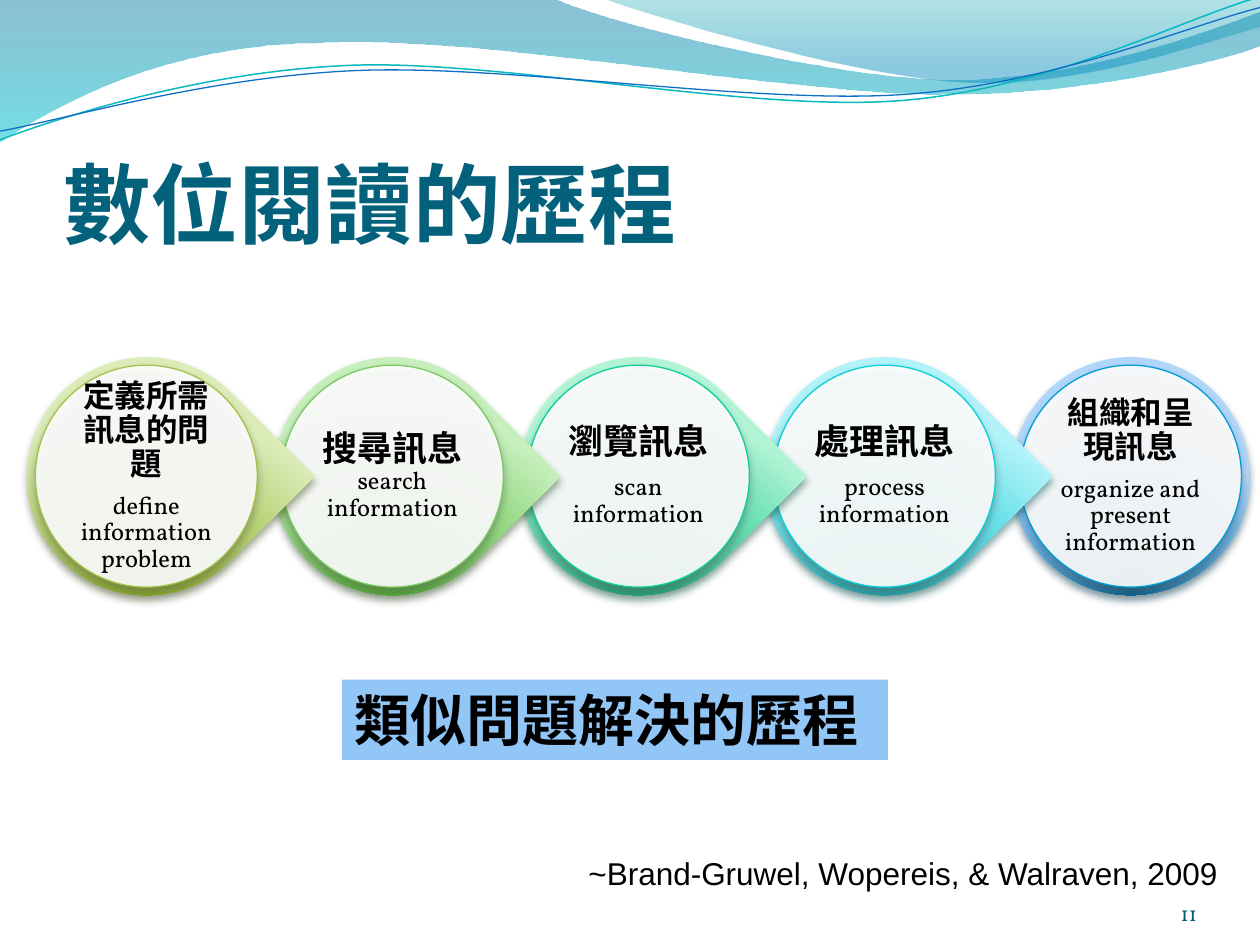
from lxml import etree
from pptx import Presentation
from pptx.dml.color import RGBColor
from pptx.enum import shapes, text
from pptx.oxml import parse_xml
from pptx.oxml.ns import nsdecls, qn
from pptx.util import Pt

BLACK = RGBColor(0x00, 0x00, 0x00)
WHITE = RGBColor(0xFF, 0xFF, 0xFF)
TITLE_TEAL = RGBColor(0x04, 0x61, 0x7B)
NUMBER_TEAL = RGBColor(0x04, 0x5D, 0x75)
BANNER_BLUE = RGBColor(0x91, 0xC6, 0xF7)
DISC_SHADOW = RGBColor(0x5A, 0x5A, 0x5A)
LINE_TEAL = RGBColor(0x0A, 0xB8, 0xBF)
LINE_BLUE = RGBColor(0x0F, 0x6F, 0xC6)

# Content
TITLE = "數位閱讀的歷程"
BANNER = "類似問題解決的歷程"
CITATION = "~Brand-Gruwel, Wopereis, & Walraven, 2009"
SLIDE_NUMBER = "11"

# Heading, heading size, detail, detail on its own paragraph,
# then colours: dark, middle, light, shadow, outline
STEPS = [
    ("定義所需訊息的問題", 18, "define information problem", True,
     ("729800", "B8D275", "DBECB9", "3A4519", "A5C249")),
    ("搜尋訊息", 20, "search information", False,
     ("319811", "95D882", "C6EFBD", "2B4821", "7CCA62")),
    ("瀏覽訊息", 20, "scan information", True,
     ("008C60", "65DEB0", "B2F4D6", "044A37", "10CF9B")),
    ("處理訊息", 20, "process information", True,
     ("008A91", "64DFE7", "B1F3F9", "024B4E", "0BD0D9")),
    ("組織和呈現訊息", 18, "organize and present information", True,
     ("006091", "64B1E7", "B1D6F9", "00374C", "009DD9")),
]

# Outlines in points: pairs are corners, sextets are Bezier curves
BANDS = [
    ([(0, -0.7), (316.8, -0.7),
      (342.7, 12.2, 478.1, 45.4, 545.8, 45.4),
      (614.2, 45.4, 689.8, 18.7, 720, 6.5), (720.7, 25.9),
      (707.8, 31.7, 626.4, 54.7, 537.1, 54),
      (447.8, 54, 275, 20.2, 185, 24.5),
      (92.9, 25.2, 33.1, 59.8, -0.7, 81.4)],
     [(0, "0074A1", 45), (100, "00C6CF", 55)]),
    ([(344.9, -0.7), (366.5, 7.9, 491, 44.6, 553.7, 46.8),
      (616.3, 49.7, 691.9, 23, 720, 15.1), (720, 0)],
     [(0, "00A1A9", 30), (80, "008BBF", 45)]),
]
WAVES = [
    ([(0, 79.9), (34.6, 67, 113.8, 41, 199.4, 37.4),
      (284.4, 33.8, 427, 64.1, 513.4, 57.6),
      (599.8, 51.1, 675.4, 10.8, 718.6, -1.4)], LINE_TEAL, 0.85),
    ([(0, 74.9), (33.8, 69.1, 118.1, 43.9, 203.8, 40.3),
      (290.2, 36.7, 429.8, 59.8, 516.2, 54),
      (601.9, 48.2, 677.5, 15.1, 720, 4.3)], LINE_BLUE, 0.75),
]

# Step geometry
STEP_LEFT, STEP_TOP, STEP_PITCH = 15.6, 204.1, 140.6
DROP_SIZE, DISC_SIZE, LABEL_SIZE = 136, 126.8, 90.8


def add_outline(slide, outline, closed):
    """Join the end points, then bend the sides that are curves."""
    ends = [(Pt(segment[-2]), Pt(segment[-1])) for segment in outline]
    builder = slide.shapes.build_freeform(*ends[0], scale=1.0)
    builder.add_line_segments(ends[1:], close=closed)
    shape = builder.convert_to_shape()
    sides = list(shape._element.spPr.iter(qn("a:lnTo")))
    for side, segment in zip(sides, outline[1:]):
        if len(segment) == 6:
            curve = etree.Element(qn("a:cubicBezTo"))
            for x, y in zip(segment[::2], segment[1::2]):
                point = etree.SubElement(curve, qn("a:pt"))
                point.set("x", str(Pt(x) - shape.left))
                point.set("y", str(Pt(y) - shape.top))
            side.getparent().replace(side, curve)
    shape.shadow.inherit = False
    shape.fill.background()
    return shape


def set_gradient(shape, stops, direction):
    shape.fill.background()
    stop_xml = "".join(
        f'<a:gs pos="{position * 1000}"><a:srgbClr val="{color}">'
        f'<a:alpha val="{alpha * 1000}"/></a:srgbClr></a:gs>'
        for position, color, alpha in stops)
    gradient = parse_xml(f'<a:gradFill {nsdecls("a")} rotWithShape="1">'
                         f'<a:gsLst>{stop_xml}</a:gsLst>{direction}</a:gradFill>')
    properties = shape._element.spPr
    properties.replace(properties.find(qn("a:noFill")), gradient)


def set_shadow(shape, color):
    shape.shadow.inherit = False
    effects = shape._element.spPr.find(qn("a:effectLst"))
    effects.append(parse_xml(
        f'<a:outerShdw {nsdecls("a")} blurRad="{Pt(4.5)}" dist="{Pt(3)}" dir="5400000" '
        f'rotWithShape="0"><a:srgbClr val="{color}"><a:alpha val="48000"/>'
        '</a:srgbClr></a:outerShdw>'))


def set_frame(frame, margins=None, anchor=text.MSO_ANCHOR.TOP):
    frame.word_wrap = True
    frame.auto_size = text.MSO_AUTO_SIZE.NONE
    frame.vertical_anchor = anchor
    if margins:
        (frame.margin_left, frame.margin_top,
         frame.margin_right, frame.margin_bottom) = map(Pt, margins)


def set_font(font, name, size, color, bold=False):
    font.name, font.size, font.bold = name, Pt(size), bold
    font.color.rgb = color


def write_line(shape, content, alignment, *font):
    paragraph = shape.text_frame.paragraphs[0]
    paragraph.text = content
    paragraph.alignment = alignment
    set_font(paragraph.font, *font)


def centred_box(index, size):
    """Square centred on the step's drop."""
    inset = (DROP_SIZE - size) / 2
    return (Pt(STEP_LEFT + index * STEP_PITCH + inset), Pt(STEP_TOP + inset),
            Pt(size), Pt(size))


def add_step(slide, index, is_last):
    heading, heading_size, detail, separate, colors = STEPS[index]
    dark, middle, light, shadow, outline = colors

    # Drop pointing at the next step; the last one is round
    kind = shapes.MSO_SHAPE.OVAL if is_last else shapes.MSO_SHAPE.TEAR
    drop = slide.shapes.add_shape(kind, *centred_box(index, DROP_SIZE))
    if not is_last:
        drop.rotation = 45
    set_gradient(drop, [(0, dark, 100), (68, middle, 100), (100, light, 100)],
                 '<a:path path="circle"><a:fillToRect l="50000" t="130000" '
                 'r="50000" b="-30000"/></a:path>')
    drop.line.fill.background()
    set_shadow(drop, shadow)

    # White disc
    disc = slide.shapes.add_shape(shapes.MSO_SHAPE.OVAL, *centred_box(index, DISC_SIZE))
    disc.fill.solid()
    disc.fill.fore_color.rgb = WHITE
    fill_color = disc._element.spPr.find(qn("a:solidFill")).find(qn("a:srgbClr"))
    etree.SubElement(fill_color, qn("a:alpha")).set("val", "90000")
    disc.line.color.rgb = RGBColor.from_string(outline)
    disc.line.width = Pt(0.75)
    set_shadow(disc, DISC_SHADOW)

    # Label
    frame = slide.shapes.add_textbox(*centred_box(index, LABEL_SIZE)).text_frame
    set_frame(frame, (2, 2, 2, 2), text.MSO_ANCHOR.MIDDLE)
    paragraph = frame.paragraphs[0]
    for content, size, bold in ((heading, heading_size, True), (detail, 14, False)):
        if separate and not bold:
            paragraph = frame.add_paragraph()
        paragraph.alignment = text.PP_ALIGN.CENTER
        paragraph.line_spacing = 0.9
        paragraph.space_after = Pt(round(0.35 * size, 1))
        run = paragraph.add_run()
        run.text = content
        set_font(run.font, "Vollkorn", size, BLACK, bold)


def main():
    presentation = Presentation()
    presentation.slide_width, presentation.slide_height = Pt(720), Pt(540)
    slide = presentation.slides.add_slide(presentation.slide_layouts[5])

    # Waves along the top
    for outline, stops in BANDS:
        band = add_outline(slide, outline, True)
        set_gradient(band, stops, '<a:lin ang="5400000" scaled="0"/>')
        band.line.fill.background()
    for outline, color, width in WAVES:
        wave = add_outline(slide, outline, False)
        wave.line.color.rgb = color
        wave.line.width = Pt(width)

    # Title
    title = slide.shapes.title
    title.left, title.top, title.width, title.height = Pt(36), Pt(55.8), Pt(648), Pt(90)
    set_frame(title.text_frame, (0, 3.6, 0, 0), text.MSO_ANCHOR.BOTTOM)
    write_line(title, TITLE, text.PP_ALIGN.LEFT, "Calibri", 50, TITLE_TEAL, True)

    # Citation
    citation = slide.shapes.add_textbox(Pt(315), Pt(484.6), Pt(388), Pt(29))
    set_frame(citation.text_frame)
    write_line(citation, CITATION, text.PP_ALIGN.RIGHT, "Arial", 18, BLACK)

    # Steps, last one at the back
    last = len(STEPS) - 1
    for index in range(last, -1, -1):
        add_step(slide, index, index == last)

    # Banner
    banner = slide.shapes.add_shape(shapes.MSO_SHAPE.RECTANGLE,
                                    Pt(195.4), Pt(388.3), Pt(312), Pt(46))
    banner.shadow.inherit = False
    banner.fill.solid()
    banner.fill.fore_color.rgb = BANNER_BLUE
    banner.line.fill.background()
    set_frame(banner.text_frame)
    write_line(banner, BANNER, text.PP_ALIGN.LEFT, "Arial", 32, BLACK, True)

    # Slide number
    number = slide.shapes.add_textbox(Pt(624), Pt(500.4), Pt(60), Pt(28.8))
    set_frame(number.text_frame, (0, 0, 0, 0), text.MSO_ANCHOR.BOTTOM)
    write_line(number, SLIDE_NUMBER, text.PP_ALIGN.RIGHT, "Vollkorn", 12, NUMBER_TEAL)

    presentation.save("out.pptx")


if __name__ == "__main__":
    main()
